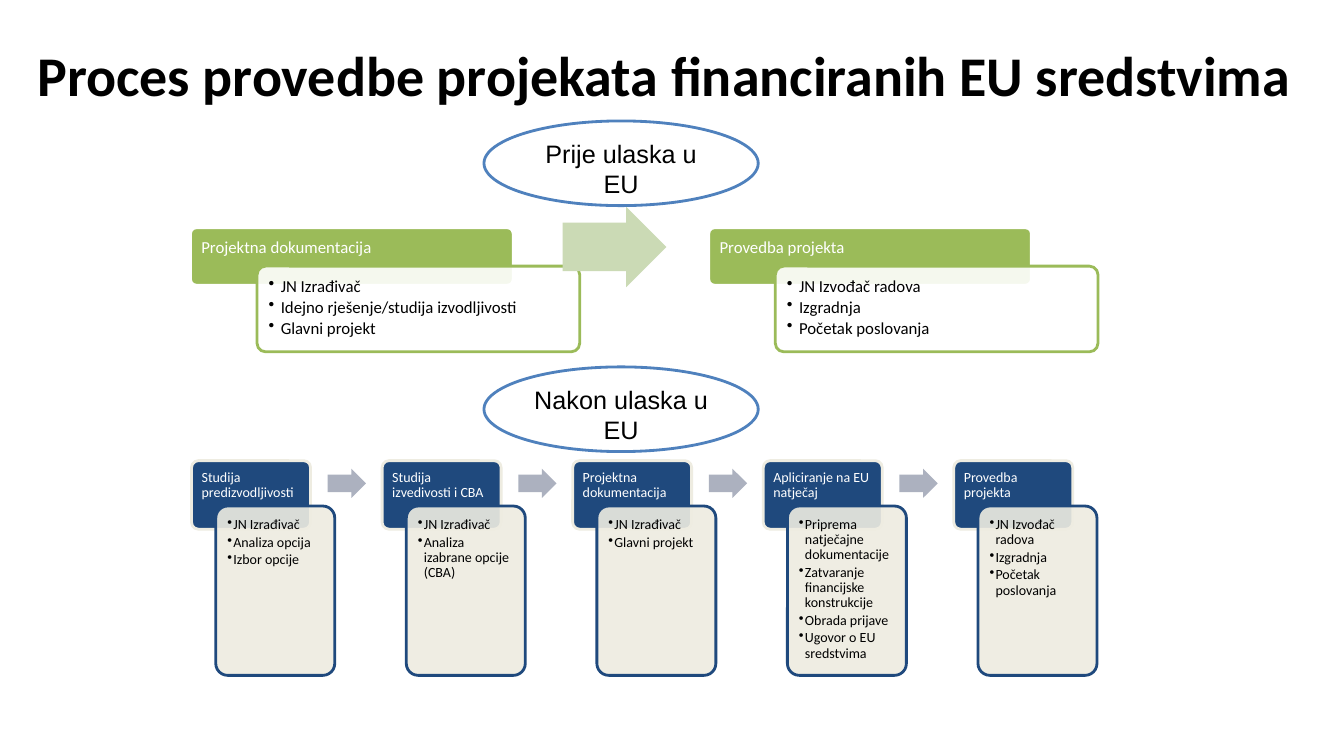
import dataclasses

import lxml.etree
import pptx
import pptx.dml.color
import pptx.enum.shapes
import pptx.enum.text
import pptx.oxml.ns
import pptx.util

Inches = pptx.util.Inches
SHAPE = pptx.enum.shapes.MSO_SHAPE
ALIGN = pptx.enum.text.PP_ALIGN
ANCHOR = pptx.enum.text.MSO_ANCHOR


@dataclasses.dataclass
class ProcessStyle:
    """Lengths are inches; offsets run from a stage's top left corner."""
    pitch: float
    header_size: tuple
    body_offset: tuple
    body_size: tuple
    arrow_offset: tuple
    arrow_size: tuple
    header_fill: str
    header_line: str
    body_fill: str
    arrow_fill: str
    font_size: int
    margin: float
    indent: float


BEFORE_STYLE = ProcessStyle(
    pitch=5.14, header_size=(3.2, 0.57), body_offset=(0.66, 0.38),
    body_size=(3.2, 0.85), arrow_offset=(3.69, -0.21), arrow_size=(1.03, 0.8),
    header_fill="9BBB59", header_line="FFFFFF", body_fill="FFFFFF",
    arrow_fill="CBDAB5", font_size=12, margin=0.09, indent=0.12)
AFTER_STYLE = ProcessStyle(
    pitch=1.89, header_size=(1.18, 0.68), body_offset=(0.24, 0.45),
    body_size=(1.18, 1.68), arrow_offset=(1.35, 0.08), arrow_size=(0.38, 0.29),
    header_fill="1F497D", header_line="EEECE1", body_fill="EEECE1",
    arrow_fill="ACB1BF", font_size=10, margin=0.08, indent=0.06)

BEFORE_STAGES = [
    ("Projektna dokumentacija",
     ["JN Izrađivač", "Idejno rješenje/studija izvodljivosti", "Glavni projekt"]),
    ("Provedba projekta",
     ["JN Izvođač radova", "Izgradnja", "Početak poslovanja"]),
]
AFTER_STAGES = [
    ("Studija predizvodljivosti",
     ["JN Izrađivač", "Analiza opcija", "Izbor opcije"]),
    ("Studija izvedivosti i CBA",
     ["JN Izrađivač", "Analiza izabrane opcije (CBA)"]),
    ("Projektna dokumentacija", ["JN Izrađivač", "Glavni projekt"]),
    ("Apliciranje na EU natječaj",
     ["Priprema natječajne dokumentacije", "Zatvaranje financijske konstrukcije",
      "Obrada prijave", "Ugovor o EU sredstvima"]),
    ("Provedba projekta",
     ["JN Izvođač radova", "Izgradnja", "Početak poslovanja"]),
]


def colour(hex_string):
    return pptx.dml.color.RGBColor.from_string(hex_string)


def add_shape(slide, kind, position, size, fill, line=None):
    shape = slide.shapes.add_shape(
        kind, *(Inches(length) for length in (*position, *size)))
    shape.shadow.inherit = False
    shape.fill.solid()
    shape.fill.fore_color.rgb = colour(fill)
    if line:
        shape.line.color.rgb = colour(line)
        shape.line.width = pptx.util.Pt(2)
    else:
        shape.line.fill.background()
    return shape


def set_opacity(shape, percent):
    tag = pptx.oxml.ns.qn("a:srgbClr")
    fill_colour = next(shape.fill._xPr.iter(tag))
    alpha = lxml.etree.SubElement(fill_colour, pptx.oxml.ns.qn("a:alpha"))
    alpha.set("val", str(percent * 1000))


def format_paragraph(paragraph, font, size, text_colour, alignment=ALIGN.LEFT):
    paragraph.alignment = alignment
    paragraph.font.name = font
    paragraph.font.size = pptx.util.Pt(size)
    paragraph.font.color.rgb = colour(text_colour)


def add_bullet(paragraph, indent):
    properties = paragraph._p.get_or_add_pPr()
    properties.set("marL", str(Inches(indent)))
    properties.set("indent", str(-Inches(indent)))
    bullet = lxml.etree.SubElement(properties, pptx.oxml.ns.qn("a:buChar"))
    bullet.set("char", "•")


def fill_card(card, lines, style, text_colour, bulleted):
    frame = card.text_frame
    frame.word_wrap = True
    frame.vertical_anchor = ANCHOR.TOP
    frame.margin_left = frame.margin_right = Inches(style.margin)
    frame.margin_top = frame.margin_bottom = Inches(style.margin)
    for index, line in enumerate(lines):
        paragraph = frame.add_paragraph() if index else frame.paragraphs[0]
        paragraph.text = line
        if bulleted:
            add_bullet(paragraph, style.indent)
        paragraph.line_spacing = 0.9
        paragraph.space_after = pptx.util.Pt(0.17 * style.font_size)
        format_paragraph(paragraph, "Calibri", style.font_size, text_colour)


def add_stage(slide, left, top, heading, items, style):
    header = add_shape(slide, SHAPE.ROUNDED_RECTANGLE, (left, top),
                       style.header_size, style.header_fill, style.header_line)
    across, down = style.body_offset
    body = add_shape(slide, SHAPE.ROUNDED_RECTANGLE, (left + across, top + down),
                     style.body_size, style.body_fill, style.header_fill)
    set_opacity(body, 90)
    for card in (header, body):
        card.adjustments[0] = 0.1
    fill_card(header, [heading], style, "FFFFFF", bulleted=False)
    fill_card(body, items, style, "000000", bulleted=True)


def add_process(slide, left, top, stages, style):
    """Place the stages in a row, with an arrow after each but the last."""
    for index, (heading, items) in enumerate(stages):
        stage_left = left + index * style.pitch
        add_stage(slide, stage_left, top, heading, items, style)
        if index < len(stages) - 1:
            across, down = style.arrow_offset
            arrow = add_shape(slide, SHAPE.RIGHT_ARROW,
                              (stage_left + across, top + down),
                              style.arrow_size, style.arrow_fill)
            arrow.adjustments[0] = 0.6
            arrow.adjustments[1] = 0.5


def add_period(slide, left, top, label):
    ellipse = add_shape(slide, SHAPE.OVAL, (left, top), (2.72, 0.84),
                        "FFFFFF", "4F81BD")
    frame = ellipse.text_frame
    frame.word_wrap = True
    frame.vertical_anchor = ANCHOR.TOP
    frame.text = label
    format_paragraph(frame.paragraphs[0], "Arial", 18, "000000", ALIGN.CENTER)


def set_title(slide, text):
    title = slide.shapes.title
    title.left, title.top = Inches(0.27), Inches(0.05)
    title.width, title.height = Inches(12.87), Inches(1.45)
    frame = title.text_frame
    frame.text = text
    frame.word_wrap = True
    frame.auto_size = pptx.enum.text.MSO_AUTO_SIZE.NONE
    frame.vertical_anchor = ANCHOR.MIDDLE
    paragraph = frame.paragraphs[0]
    paragraph.line_spacing = 0.9
    format_paragraph(paragraph, "Calibri", 40, "000000")
    paragraph.font.bold = True


def main():
    deck = pptx.Presentation()
    deck.slide_width, deck.slide_height = Inches(13.33), Inches(7.5)
    slide = deck.slides.add_slide(deck.slide_layouts.get_by_name("Title Only"))
    set_title(slide, "Proces provedbe projekata financiranih EU sredstvima")
    add_process(slide, 1.9, 4.57, AFTER_STAGES, AFTER_STYLE)
    add_process(slide, 1.89, 2.26, BEFORE_STAGES, BEFORE_STYLE)
    add_period(slide, 4.8, 1.2, "Prije ulaska u EU")
    add_period(slide, 4.8, 3.64, "Nakon ulaska u EU")
    deck.save("out.pptx")


if __name__ == "__main__":
    main()
